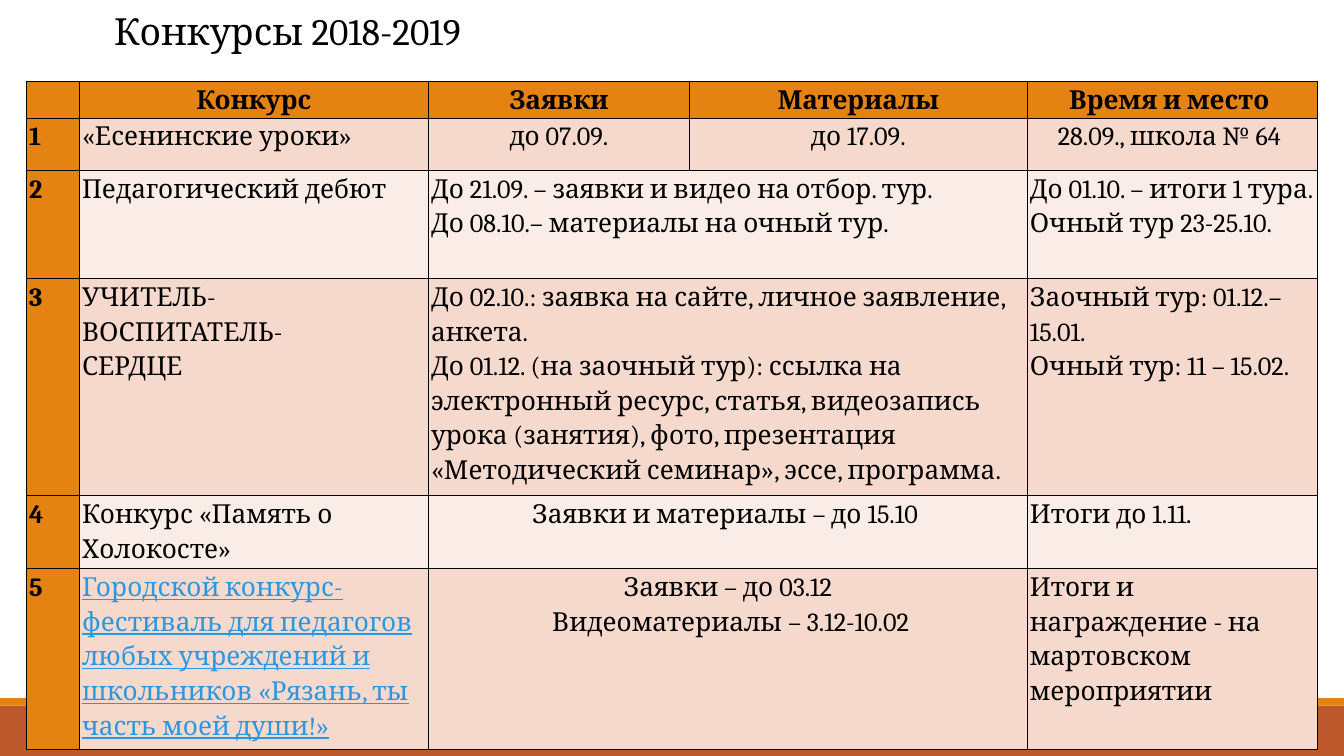
from dataclasses import dataclass

from lxml import etree
from pptx import Presentation
from pptx.dml.color import RGBColor
from pptx.enum.shapes import MSO_SHAPE
from pptx.enum.text import MSO_AUTO_SIZE, PP_ALIGN
from pptx.oxml.ns import qn
from pptx.util import Pt

RECT = MSO_SHAPE.RECTANGLE
LEFT, CENTER = PP_ALIGN.LEFT, PP_ALIGN.CENTER
FIT_SHAPE = MSO_AUTO_SIZE.SHAPE_TO_FIT_TEXT


@dataclass(frozen=True)
class Theme:
    font: str = "Cambria"
    title_size: float = 20
    cell_size: float = 14
    line_spacing: float = 1.15
    border_width: float = 0.5
    ink: str = "000000"
    accent: str = "E48312"
    footer: str = "BD582C"
    link: str = "2998E3"
    bands: tuple = ("F5D9CC", "FAEDE7")


THEME = Theme()
SLIDE_W, SLIDE_H = 720, 405
COL_WIDTHS = (28.4, 187, 139.8, 181, 155.4)
ROW_HEIGHTS = (19.5, 28.1, 57.9, 116.5, 39.1, 96.2)
LINK_ROW = 5

# Each cell is (text, alignment); None continues the cell to its left.
ROWS = [
    [("", LEFT), ("Конкурс", CENTER), ("Заявки", CENTER),
     ("Материалы", CENTER), ("Время и место ", CENTER)],
    [("1", LEFT), ("«Есенинские уроки»", LEFT), ("до 07.09.", CENTER),
     ("до 17.09.", CENTER), ("28.09., школа № 64 ", CENTER)],
    [("2", LEFT), ("Педагогический дебют", LEFT),
     ("До 21.09. – заявки и видео на отбор. тур.\n"
      "До 08.10.– материалы на очный тур.", LEFT), None,
     ("До 01.10. – итоги 1 тура.\nОчный тур 23-25.10.", LEFT)],
    [("3", LEFT), ("УЧИТЕЛЬ-\nВОСПИТАТЕЛЬ-\nСЕРДЦЕ", LEFT),
     ("До 02.10.: заявка на сайте, личное заявление, анкета.\n"
      "До 01.12. (на заочный тур): ссылка на электронный ресурс, статья, "
      "видеозапись урока (занятия), фото, презентация "
      "«Методический семинар», эссе, программа.", LEFT), None,
     ("Заочный тур: 01.12.– 15.01.\nОчный тур: 11 – 15.02.", LEFT)],
    [("4", LEFT), ("Конкурс «Память о Холокосте»", LEFT),
     ("Заявки и материалы – до 15.10 ", CENTER), None,
     ("Итоги до 1.11.", LEFT)],
    [("5", LEFT),
     ("Городской конкурс-фестиваль для педагогов любых учреждений и "
      "школьников «Рязань, ты часть моей души!»", LEFT),
     ("Заявки – до 03.12\n Видеоматериалы – 3.12-10.02", CENTER), None,
     ("Итоги и награждение - на мартовском мероприятии", LEFT)],
]


def rgb(color):
    return RGBColor.from_string(color)


def style_run(r, size, color=THEME.ink, bold=False, underline=False):
    r.font.name = THEME.font
    r.font.size = Pt(size)
    r.font.color.rgb = rgb(color)
    r.font.bold = bold
    r.font.underline = underline


def add_bar(slide, x, y, w, h, color):
    sp = slide.shapes.add_shape(RECT, Pt(x), Pt(y), Pt(w), Pt(h))
    sp.shadow.inherit = False
    sp.fill.solid()
    sp.fill.fore_color.rgb = rgb(color)
    sp.line.fill.background()


def add_footer(slide, x, y, w, h):
    """Place a band with a thin accent strip along its top."""
    strip = 4
    add_bar(slide, x, y + strip, w, h - strip, THEME.footer)
    add_bar(slide, x, y, w, strip, THEME.accent)


def add_title(slide, x, y, w, h):
    tf = slide.shapes.add_textbox(Pt(x), Pt(y), Pt(w), Pt(h)).text_frame
    tf.word_wrap = False
    tf.auto_size = FIT_SHAPE
    tf.text = "Конкурсы 2018-2019"
    style_run(tf.paragraphs[0].runs[0], THEME.title_size)


def set_borders(cell):
    """Outline a cell; the lines must precede its fill in tcPr."""
    tc_pr = cell._tc.get_or_add_tcPr()
    for i, side in enumerate(("a:lnL", "a:lnR", "a:lnT", "a:lnB")):
        ln = etree.Element(qn(side), w=str(Pt(THEME.border_width)))
        fill = etree.SubElement(ln, qn("a:solidFill"))
        etree.SubElement(fill, qn("a:srgbClr"), val=THEME.ink)
        tc_pr.insert(i, ln)


def style_cell(cell, fill):
    cell.margin_left = cell.margin_right = Pt(1.4)
    cell.margin_top = cell.margin_bottom = 0
    cell.fill.solid()
    cell.fill.fore_color.rgb = rgb(fill)
    set_borders(cell)


def write_cell(cell, text, align, bold, linked):
    cell.text = text
    for p in cell.text_frame.paragraphs:
        p.alignment = align
        p.line_spacing = THEME.line_spacing
        for r in p.runs:
            style_run(r, THEME.cell_size, THEME.link if linked else THEME.ink,
                      bold, linked)
        if not p.runs:
            # Keeps an empty cell from stretching its row.
            etree.SubElement(p._p, qn("a:endParaRPr"),
                             sz=str(THEME.cell_size * 100))


def add_contest_table(slide, x, y, w, h):
    table = slide.shapes.add_table(len(ROWS), len(COL_WIDTHS), Pt(x), Pt(y),
                                   Pt(w), Pt(h)).table
    table.first_row = table.horz_banding = False
    for column, width in zip(table.columns, COL_WIDTHS):
        column.width = Pt(width * w / sum(COL_WIDTHS))
    for row, height in zip(table.rows, ROW_HEIGHTS):
        row.height = Pt(height * h / sum(ROW_HEIGHTS))

    for i, contents in enumerate(ROWS):
        for j, content in enumerate(contents):
            cell = table.cell(i, j)
            heading = i == 0 or j == 0
            style_cell(cell, THEME.accent if heading
                       else THEME.bands[(i - 1) % 2])
            if content is None:
                table.cell(i, j - 1).merge(cell)
            else:
                write_cell(cell, *content, bold=heading,
                           linked=(i, j) == (LINK_ROW, 1))


def main():
    prs = Presentation()
    prs.slide_width, prs.slide_height = Pt(SLIDE_W), Pt(SLIDE_H)
    slide = prs.slides.add_slide(prs.slide_layouts[6])
    add_footer(slide, 0, 374, SLIDE_W, SLIDE_H - 374)
    add_title(slide, 54, 0.7, 209.5, 31.5)
    add_contest_table(slide, 14.2, 43.7, sum(COL_WIDTHS), sum(ROW_HEIGHTS))
    prs.save("out.pptx")


if __name__ == "__main__":
    main()
